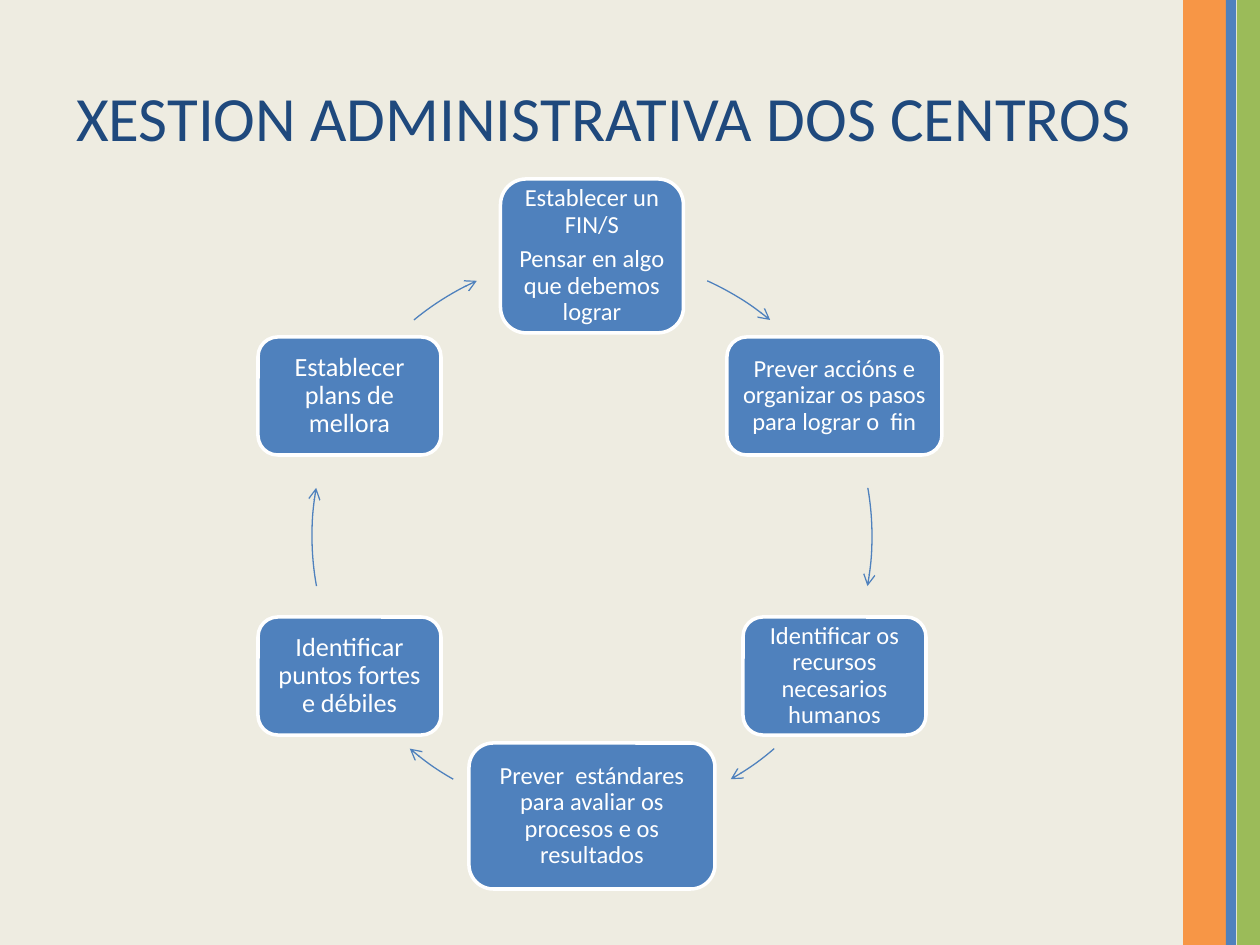
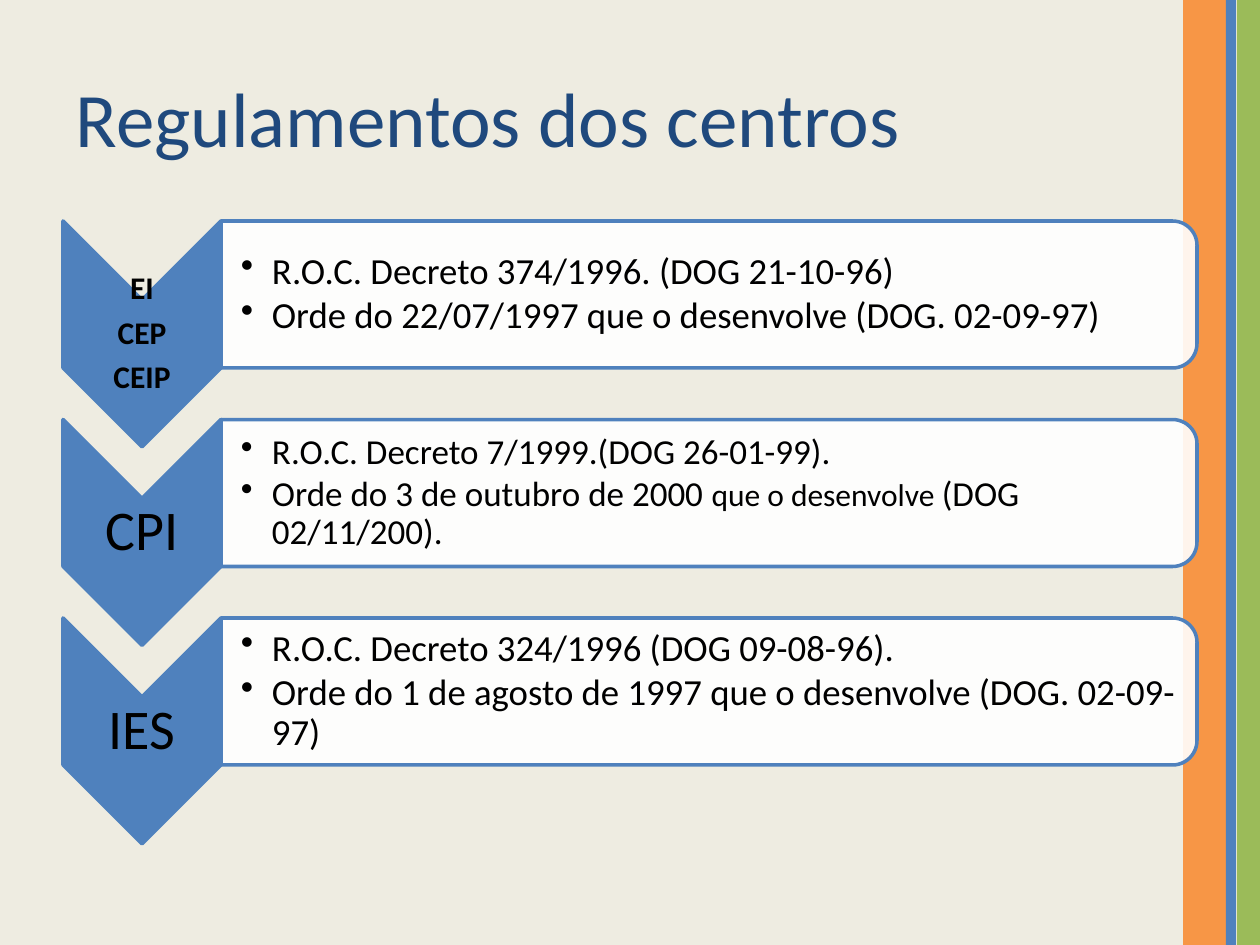
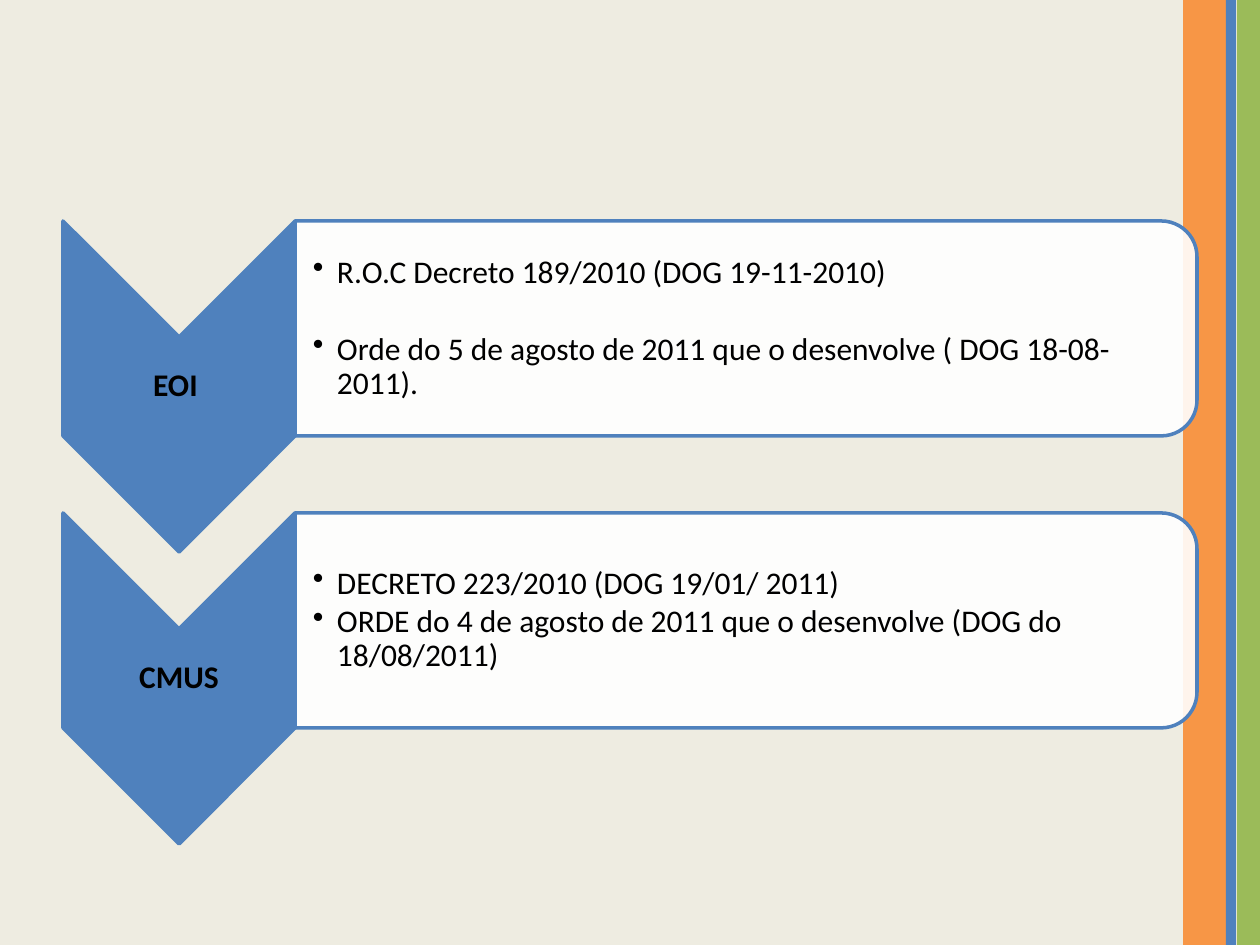
"""Build three slides on how schools are run: a cycle and two sets of rules."""
from dataclasses import dataclass
from math import cos, radians, sin

from lxml.etree import SubElement
from pptx import Presentation
from pptx.dml.color import RGBColor
from pptx.enum.shapes import MSO_SHAPE
from pptx.enum.text import MSO_ANCHOR, PP_ALIGN
from pptx.oxml.ns import qn
from pptx.util import Emu, Pt


@dataclass(frozen=True)
class Theme:
    """Colours, font and type sizes."""
    paper: str = "EEECE1"
    navy: str = "1F497D"
    blue: str = "4F81BD"
    orange: str = "F79646"
    green: str = "9BBB59"
    white: str = "FFFFFF"
    black: str = "000000"
    font: str = "Calibri"
    head: int = 44
    caps: int = 36
    tag: int = 32
    big: int = 21
    mid: int = 20
    text: int = 18
    step: int = 15
    note: int = 14


T = Theme()
SCALE = 914400 / 126
WIDE, HIGH = 1260, 945

BANDS = [(1183, 44, T.orange), (1237, 23, T.green), (1226, 10, T.blue)]
TITLE = (63, 38, 1081, 157)

HUB, RING = (592, 536), 280
STEPS = [
    (183, 154, T.note, ["Establecer un FIN/S", "Pensar en algo que debemos lograr"]),
    (215, 118, T.note, ["Prever accións e organizar os pasos para lograr o  fin"]),
    (183, 118, T.note, ["Identificar os recursos necesarios humanos"]),
    (246, 146, T.note, ["Prever  estándares para avaliar os procesos e os resultados"]),
    (183, 118, T.step, ["Identificar puntos fortes e débiles"]),
    (183, 118, T.step, ["Establecer plans de mellora"]),
]
ARCS = [(24.3, 39.5), (80.1, 100.3), (139.4, 150.3)]

LEFT, TOP, RIGHT, DEPTH = 63, 221, 1197, 623
SCHOOLS = [
    (["EI", "CEP", "CEIP"], T.text, True, 0, [
        [("R.O.C. Decreto 374/1996. (DOG 21-10-96)", T.big)],
        [("Orde do 22/07/1997 que o desenvolve (DOG. 02-09-97)", T.big)]]),
    (["CPI"], T.tag, False, 0, [
        [("R.O.C. Decreto 7/1999.(DOG 26-01-99).", T.mid)],
        [("Orde do 3 de outubro de 2000 ", T.mid), ("que o desenvolve ", T.text),
         ("(DOG 02/11/200).", T.mid)]]),
    (["IES"], T.tag, False, 0, [
        [("R.O.C. Decreto 324/1996 (DOG 09-08-96).", T.big)],
        [("Orde do 1 de agosto de 1997 que o desenvolve (DOG. 02-09-97)", T.big)]]),
]
ARTS = [
    (["EOI "], T.text, True, 22, [
        [("R.O.C Decreto 189/2010 (DOG 19-11-2010)", T.text)],
        [("Orde do 5 de agosto de 2011 que o desenvolve ( DOG 18-08-2011).", T.text)]]),
    (["CMUS"], T.text, True, 0, [
        [("DECRETO 223/2010 (DOG 19/01/ 2011)", T.text)],
        [("ORDE do 4 de agosto de 2011 que o desenvolve (DOG do 18/08/2011)", T.text)]]),
]


def px(*nums):
    """Turn pixels into EMU."""
    return [Emu(round(n * SCALE)) for n in nums]


def rgb(tint):
    """Read a hex colour."""
    return RGBColor.from_string(tint)


def shape(slide, kind, box, fill=None, line=None, width=2.0, turn=0):
    """Add a preset shape; box is what shows after a quarter turn."""
    x, y, w, h = box
    if turn:
        x, y, w, h = x + (w - h) / 2, y + (h - w) / 2, h, w
    item = slide.shapes.add_shape(kind, *px(x, y, w, h))
    item.rotation = turn
    item.shadow.inherit = False
    if fill:
        item.fill.solid()
        item.fill.fore_color.rgb = rgb(fill)
    else:
        item.fill.background()
    if line:
        item.line.color.rgb = rgb(line)
        item.line.width = Pt(width)
    else:
        item.line.fill.background()
    return item


def write(item, paras, tint, pads, align=PP_ALIGN.LEFT, bold=False,
          lead=0.9, gap=0.0, extra=0, hang=0):
    """Write paragraphs of (text, size) runs, with bullets when hang is set."""
    frame = item.text_frame
    frame.word_wrap = True
    frame.vertical_anchor = MSO_ANCHOR.MIDDLE
    (frame.margin_left, frame.margin_top,
     frame.margin_right, frame.margin_bottom) = px(*pads)
    for i, runs in enumerate(paras):
        para = frame.add_paragraph() if i else frame.paragraphs[0]
        para.alignment = align
        para.line_spacing = lead
        para.space_after = Pt(runs[0][1] * gap + (0 if i else extra))
        if hang:
            props = para._p.get_or_add_pPr()
            props.set("marL", str(px(hang)[0]))
            props.set("indent", str(-px(hang)[0]))
            SubElement(props, qn("a:buChar")).set("char", "•")
        for text, size in runs:
            run = para.add_run()
            run.text = text
            run.font.name = T.font
            run.font.size = Pt(size)
            run.font.bold = bold
            run.font.color.rgb = rgb(tint)


def label(slide, box, *args, **more):
    """Add a text box."""
    write(slide.shapes.add_textbox(*px(*box)), *args, **more)


def page(deck, title="", size=T.head, align=PP_ALIGN.LEFT):
    """Add a slide with its side bands and title."""
    slide = deck.slides.add_slide(deck.slide_layouts[6])
    for x, w, tint in BANDS:
        shape(slide, MSO_SHAPE.RECTANGLE, (x, 0, w, HIGH), tint)
    if title:
        label(slide, TITLE, [[(title, size)]], T.navy, (13, 6, 13, 6), align, lead=1.0)
    return slide


def cycle(slide):
    """Place the steps on a ring and join them with arcs."""
    for i, (w, h, size, lines) in enumerate(STEPS):
        turn = radians(360 / len(STEPS) * i)
        x, y = HUB[0] + RING * sin(turn), HUB[1] - RING * cos(turn)
        box = shape(slide, MSO_SHAPE.ROUNDED_RECTANGLE,
                    (x - w / 2, y - h / 2, w, h), T.blue, T.white)
        write(box, [[(line, size)] for line in lines], T.white, (8,) * 4,
              PP_ALIGN.CENTER, gap=0.33)
    ring = (HUB[0] - RING, HUB[1] - RING, 2 * RING, 2 * RING)
    for ends in ARCS + [(360 - b, 360 - a) for a, b in ARCS]:
        arc = shape(slide, MSO_SHAPE.ARC, ring, None, T.blue, 0.75)
        for i, deg in enumerate(ends):
            arc.adjustments[i] = (deg - 90) % 360 * 0.6
        SubElement(arc.line._get_or_add_ln(), qn("a:tailEnd")).set("type", "arrow")


def rules(slide, rows, tall, inset, hang):
    """Stack chevrons, each with a bar of rules beside it."""
    wide, bar = round(tall * 0.7), round(tall * 0.65)
    pad = round(bar * 0.048)
    pitch = (DEPTH - tall) / (len(rows) - 1)
    start = LEFT + wide
    for i, (names, size, bold, extra, paras) in enumerate(rows):
        y = TOP + i * pitch
        shape(slide, MSO_SHAPE.CHEVRON, (LEFT, y, wide, tall), T.blue, T.blue, turn=90)
        label(slide, (LEFT, y + wide / 2, wide, tall - wide),
              [[(name, size)] for name in names], T.black, (2,) * 4,
              PP_ALIGN.CENTER, bold, gap=0.33)
        card = shape(slide, MSO_SHAPE.ROUND_2_SAME_RECTANGLE,
                     (start, y, RIGHT - start, bar), T.white, T.blue, turn=90)
        tint = card.fill._xPr.find(qn("a:solidFill"))[0]
        SubElement(tint, qn("a:alpha")).set("val", "90000")
        label(slide, (start, y + pad, RIGHT - start - pad, bar - 2 * pad),
              paras, T.black, (inset, 1, 1, 1), gap=0.13, extra=extra, hang=hang)


def main():
    """Build and save the deck."""
    deck = Presentation()
    deck.slide_width, deck.slide_height = px(WIDE, HIGH)
    back = deck.slide_master.background.fill
    back.solid()
    back.fore_color.rgb = rgb(T.paper)
    cycle(page(deck, "XESTION ADMINISTRATIVA DOS CENTROS", T.caps, PP_ALIGN.CENTER))
    rules(page(deck, "Regulamentos dos centros"), SCHOOLS, 226, 20, 31)
    rules(page(deck), ARTS, 331, 18, 24)
    deck.save("out.pptx")


if __name__ == "__main__":
    main()
